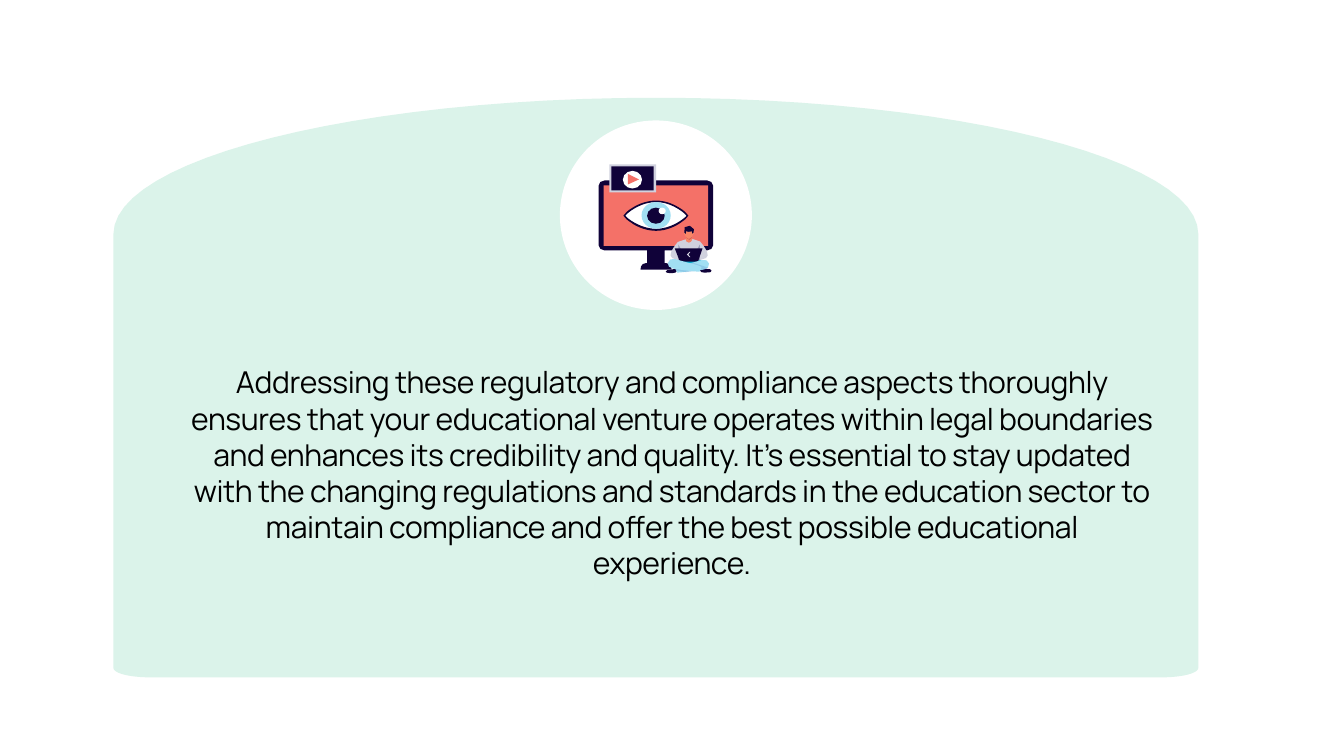
from lxml import etree
from pptx import Presentation
from pptx import util as u
from pptx.dml.color import RGBColor
from pptx.enum import shapes, text
from pptx.oxml.ns import qn

THEME = {
    "mint": "DBF3EA", "white": "FFFFFF", "navy": "100239", "coral": "F47168",
    "sky": "A1DFF3", "teal": "04A9CC", "silver": "D0D1DE", "grey": "9C9EB9",
    "shade": "4376BD", "skin": "F88667", "neck": "D16659", "ink": "000000",
    "font": "Manrope", "body": 43, "leading": 51.6, "tracking": -50,
}
UNIT = u.Cm(0.0254)  # drawing grid: 1000 units are 25.4 cm
RECT, OVAL = shapes.MSO_SHAPE.RECTANGLE, shapes.MSO_SHAPE.OVAL


def paint(shape, colour):
    shape.shadow.inherit = False
    shape.fill.solid()
    shape.fill.fore_color.rgb = RGBColor.from_string(THEME[colour])
    shape.line.fill.background()
    return shape


def outline(parent, colour, *contours):
    """Each contour is a start point, then (x, y) lines and six-number Bezier curves."""
    builder = None
    for start, *segments in contours:
        x, y = start
        points = []
        for segment in segments:
            end_x, end_y = segment[-2:]
            if len(segment) == 6:
                ax, ay, bx, by = segment[:4]
                reach = max(abs(end_x - x), abs(end_y - y))
                steps = max(1, min(24, round(reach / 6)))  # small curves need few steps
                for step in range(1, steps + 1):
                    t = step / steps
                    s = 1 - t
                    weights = s**3, 3 * s * s * t, 3 * s * t * t, t**3
                    points.append((
                        sum(w * v for w, v in zip(weights, (x, ax, bx, end_x))) * UNIT,
                        sum(w * v for w, v in zip(weights, (y, ay, by, end_y))) * UNIT))
            else:
                points.append((end_x * UNIT, end_y * UNIT))
            x, y = end_x, end_y
        if builder is None:
            builder = parent.build_freeform(start[0] * UNIT, start[1] * UNIT, scale=1.0)
        else:
            builder.move_to(start[0] * UNIT, start[1] * UNIT)
        builder.add_line_segments(points, close=True)
    return paint(builder.convert_to_shape(), colour)


deck = Presentation()
deck.slide_width, deck.slide_height = u.Cm(67.74), u.Cm(38.1)
page = deck.slides.add_slide(deck.slide_layouts[6])

# Arched panel
outline(page.shapes, "mint", [
    (1302, 194), (1896, 194, 2378, 315, 2378, 465), (2378, 1325),
    (2378, 1336, 2345, 1344, 2305, 1344), (298, 1344),
    (258, 1344, 225, 1336, 225, 1325), (225, 465), (225, 315, 707, 194, 1302, 194)])

# Message
box = page.shapes.add_textbox(u.Cm(9.22), u.Cm(18.21), u.Cm(49.3), u.Cm(13.64))
frame = box.text_frame
frame.word_wrap = True
frame.auto_size = text.MSO_AUTO_SIZE.SHAPE_TO_FIT_TEXT
frame.margin_left = frame.margin_right = frame.margin_top = frame.margin_bottom = u.Cm(0.13)
para = frame.paragraphs[0]
para.alignment = text.PP_ALIGN.CENTER
para.line_spacing = u.Pt(THEME["leading"])
span = para.add_run()
span.text = (
    "Addressing these regulatory and compliance aspects thoroughly ensures that your "
    "educational venture operates within legal boundaries and enhances its credibility "
    "and quality. It's essential to stay updated with the changing regulations and "
    "standards in the education sector to maintain compliance and offer the best "
    "possible educational experience.")
span.font.name = THEME["font"]
span.font.size = u.Pt(THEME["body"])
span.font.color.rgb = RGBColor.from_string(THEME["ink"])
span.font._element.set("spc", str(THEME["tracking"]))

# Icon: white disc and monitor
icon = page.shapes.add_group_shape().shapes
paint(icon.add_shape(OVAL, *(n * UNIT for n in (1111, 239, 381, 376))), "white")
outline(icon, "navy", [
    (1200, 358), (1403, 358), (1410, 358, 1415, 363, 1415, 368), (1415, 487),
    (1415, 492, 1410, 497, 1403, 497), (1319, 497), (1319, 522), (1322, 522),
    (1326, 522, 1330, 525, 1331, 529), (1333, 535), (1271, 535), (1272, 529),
    (1273, 525, 1277, 522, 1282, 522), (1284, 522), (1284, 497), (1200, 497),
    (1193, 497, 1188, 492, 1188, 487), (1188, 368), (1188, 363, 1193, 358, 1200, 358)])
paint(icon.add_shape(RECT, *(n * UNIT for n in (1198, 368, 207, 120))), "coral")

# Eye on the screen
outline(icon, "white", [
    (1302, 456), (1283, 456, 1268, 449, 1257, 443), (1248, 438, 1239, 430, 1239, 428),
    (1239, 426, 1248, 418, 1257, 413), (1268, 407, 1283, 400, 1302, 400),
    (1320, 400, 1336, 407, 1346, 413), (1355, 418, 1364, 426, 1364, 428),
    (1364, 430, 1355, 438, 1346, 443), (1336, 449, 1320, 456, 1302, 456)])
outline(icon, "navy", [
    (1302, 398), (1283, 398, 1267, 405, 1257, 411), (1250, 415, 1246, 418, 1243, 421),
    (1237, 425, 1237, 427, 1237, 428), (1237, 429, 1237, 430, 1243, 435),
    (1246, 437, 1250, 441, 1257, 445), (1267, 451, 1283, 458, 1302, 458),
    (1320, 458, 1336, 451, 1346, 445), (1353, 441, 1357, 437, 1360, 435),
    (1366, 430, 1366, 429, 1366, 428), (1366, 427, 1366, 425, 1360, 421),
    (1357, 418, 1353, 415, 1346, 411), (1336, 405, 1320, 398, 1302, 398)],
    [(1302, 401), (1335, 401, 1362, 426, 1362, 428), (1362, 430, 1335, 454, 1302, 454),
     (1268, 454, 1241, 430, 1241, 428), (1241, 426, 1268, 401, 1302, 401)])
for colour, *place in (("sky", 1273, 401, 58, 53), ("navy", 1284, 412, 35, 32),
                       ("white", 1307, 412, 14, 13)):
    paint(icon.add_shape(OVAL, *(n * UNIT for n in place)), colour)

# Seated person: torso and laptop
paint(icon.add_shape(RECT, *(n * UNIT for n in (1344, 516, 49, 8))), "teal")
outline(icon, "silver", [
    (1360, 474), (1363, 480), (1367, 481), (1371, 480), (1374, 474), (1389, 479),
    (1389, 479, 1413, 505, 1401, 512), (1389, 516), (1345, 516), (1334, 512),
    (1323, 506, 1341, 485, 1345, 480), (1360, 475)])
outline(icon, "grey", [(1389, 485), (1389, 516), (1371, 516)],
        [(1346, 485), (1364, 516), (1346, 516)])
outline(icon, "navy", [(1385, 519), (1349, 519), (1339, 493), (1394, 493)])
outline(icon, "silver", [
    (1366, 505), (1370, 500), (1368, 500), (1363, 505), (1368, 510), (1370, 510)])

# Shoes and crossed legs
outline(icon, "navy", [
    (1343, 538), (1343, 538, 1339, 544, 1334, 542), (1331, 541, 1325, 543, 1323, 541),
    (1321, 539), (1324, 536), (1327, 536), (1342, 533)])
outline(icon, "navy", [
    (1389, 537), (1389, 537, 1393, 543, 1398, 541), (1401, 540, 1408, 541, 1410, 540),
    (1412, 537), (1409, 534), (1405, 534), (1390, 532)])
outline(icon, "sky", [
    (1340, 533), (1340, 533, 1341, 541, 1344, 541), (1357, 540, 1390, 536, 1396, 535),
    (1403, 534, 1409, 529, 1407, 523), (1407, 518, 1399, 513, 1392, 516),
    (1363, 525, 1339, 529, 1340, 533)])
shadow = outline(icon, "shade", [
    (1375, 521), (1354, 527, 1339, 530, 1340, 533), (1341, 537), (1361, 540),
    (1375, 538, 1392, 536, 1396, 536), (1400, 535, 1403, 533, 1405, 531)])
tint = shadow._element.spPr.find(".//" + qn("a:srgbClr"))
etree.SubElement(tint, qn("a:alpha")).set("val", "20000")
outline(icon, "sky", [
    (1392, 531), (1392, 531, 1391, 539, 1388, 539), (1375, 539, 1342, 534, 1336, 533),
    (1329, 532, 1324, 527, 1325, 522), (1326, 516, 1333, 511, 1340, 514),
    (1369, 523, 1393, 527, 1392, 531)])

# Neck, face and hair
outline(icon, "skin", [
    (1362, 468), (1373, 468), (1374, 474), (1371, 480), (1367, 481), (1363, 480),
    (1360, 474), (1362, 473)])
outline(icon, "neck", [(1362, 468), (1362, 472), (1368, 476), (1373, 472), (1373, 468)])
outline(icon, "skin", [
    (1367, 451), (1373, 451, 1375, 454, 1376, 458), (1376, 462), (1377, 464),
    (1375, 466), (1373, 470), (1367, 474), (1361, 470), (1359, 466), (1357, 464),
    (1358, 462), (1358, 457, 1359, 451, 1367, 451)])
outline(icon, "navy", [
    (1358, 462), (1361, 464), (1361, 459), (1367, 460), (1373, 459), (1374, 464),
    (1376, 462), (1376, 462, 1381, 448, 1369, 448), (1360, 447, 1354, 452, 1358, 462)])

# Video window with play button
for kind, colour, *place in ((RECT, "silver", 1209, 326, 93, 56),
                             (RECT, "navy", 1213, 330, 84, 48),
                             (OVAL, "white", 1236, 339, 38, 35)):
    paint(icon.add_shape(kind, *(n * UNIT for n in place)), colour)
outline(icon, "coral", [(1268, 356), (1246, 366), (1246, 345)])

deck.save("out.pptx")
